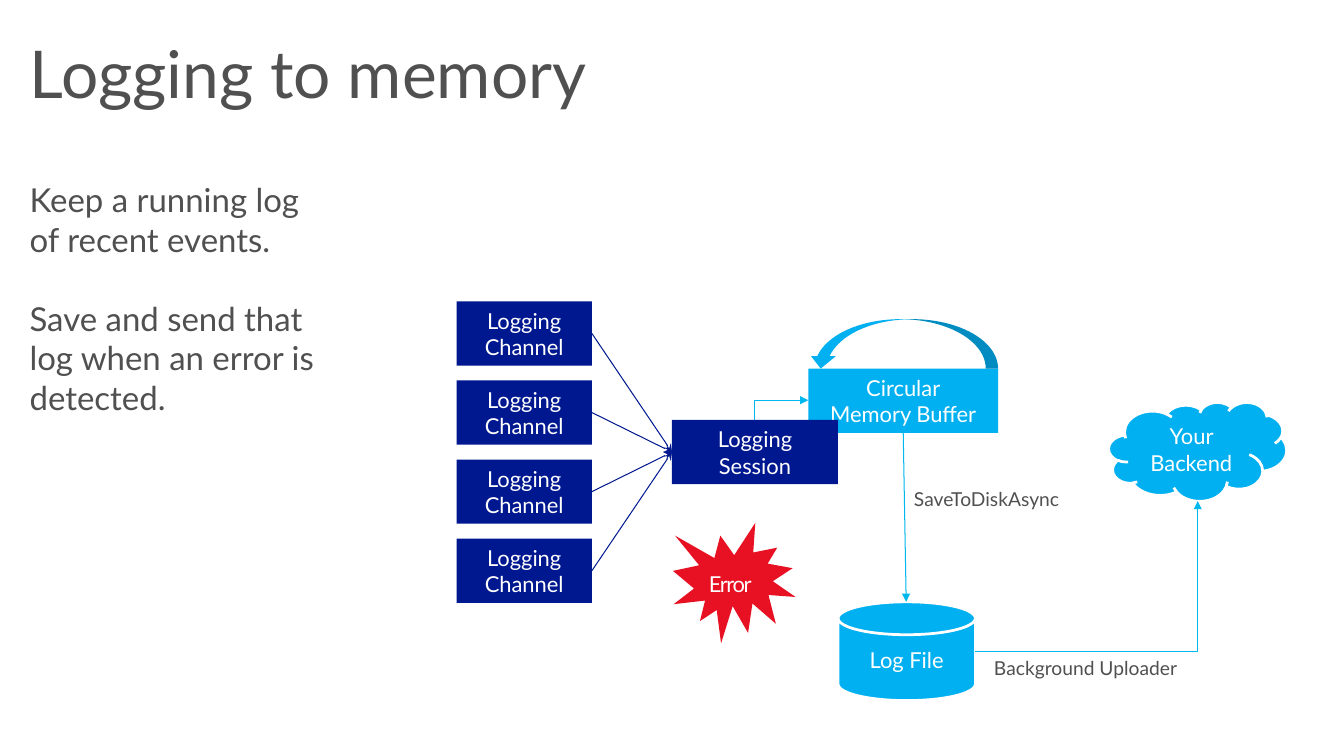
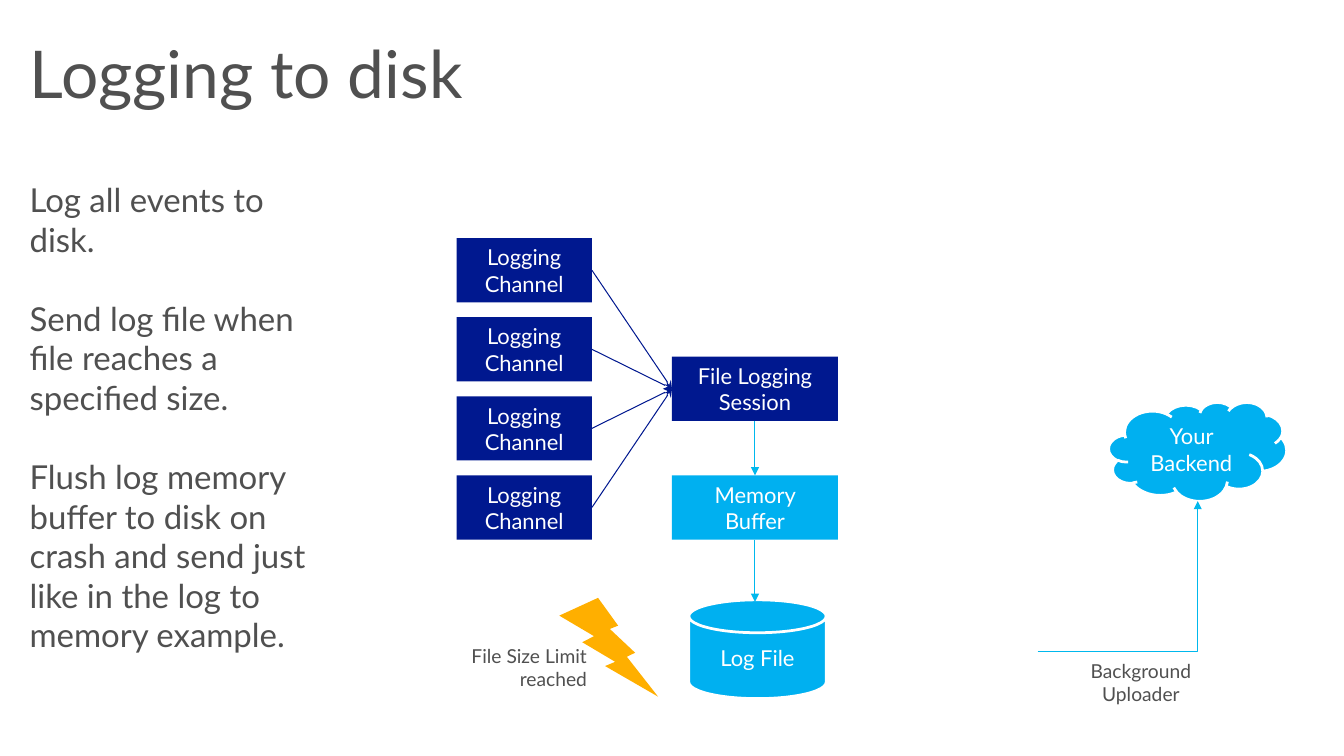
"""Build two slides on logging to memory and to disk."""
from lxml import etree
from pptx import Presentation
from pptx.dml.color import RGBColor
from pptx.enum.shapes import MSO_CONNECTOR, MSO_SHAPE
from pptx.enum.text import MSO_ANCHOR, PP_ALIGN
from pptx.oxml.ns import qn
from pptx.util import Inches, Pt

NAVY = RGBColor(0x00, 0x18, 0x8F)
SKY = RGBColor(0x00, 0xB0, 0xF0)
CYAN = RGBColor(0x00, 0xB8, 0xED)
RED = RGBColor(0xE8, 0x11, 0x23)
AMBER = RGBColor(0xFF, 0xAF, 0x00)
GREY = RGBColor(0x50, 0x50, 0x50)
WHITE = RGBColor(0xFF, 0xFF, 0xFF)

RECTANGLE = MSO_SHAPE.RECTANGLE
DISK = MSO_SHAPE.FLOWCHART_MAGNETIC_DISK
CLOUD = MSO_SHAPE.CLOUD
BURST = MSO_SHAPE.EXPLOSION1
BOLT = MSO_SHAPE.LIGHTNING_BOLT
LOOP = MSO_SHAPE.CURVED_DOWN_ARROW
STRAIGHT, ELBOW = MSO_CONNECTOR.STRAIGHT, MSO_CONNECTOR.ELBOW
LEFT, CENTER, RIGHT = PP_ALIGN.LEFT, PP_ALIGN.CENTER, PP_ALIGN.RIGHT
TOP, MIDDLE, BOTTOM = MSO_ANCHOR.TOP, MSO_ANCHOR.MIDDLE, MSO_ANCHOR.BOTTOM

FONT = "Lato"
COLUMNS, ROWS = 136, 76.5
CHANNEL_COUNT, CHANNEL_PITCH = 4, 8
BOX_HEIGHT = 6.5
SESSION_COLUMN, SESSION_WIDTH = 68, 16.8
DISK_SIZE = (13.9, 10)
LABEL_INSETS = (1.3, 0.7, 1.3, 0.7)
CAPTION_INSETS = (1, 0.5, 1, 0.5)
NO_INSETS = (0, 0, 0, 0)


def cells(count):
    """Turn a number of grid cells into a length."""
    return Inches(round(count * 0.1, 3))


def write(box, text, size, color, align=LEFT, anchor=TOP, insets=NO_INSETS, gap=0, wrap=True):
    """Fill a box with text and format each paragraph and run."""
    frame = box.text_frame
    frame.text = text
    frame.word_wrap = wrap
    frame.vertical_anchor = anchor
    (frame.margin_left, frame.margin_top,
     frame.margin_right, frame.margin_bottom) = map(cells, insets)
    for index, para in enumerate(frame.paragraphs):
        para.alignment = align
        para.space_before = Pt(gap if index else 0)
        for span in para.runs:
            span.font.name = FONT
            span.font.size = Pt(size)
            span.font.color.rgb = color


def add_text(page, area, text, size, **style):
    """Add a grey text box."""
    box = page.shapes.add_textbox(*map(cells, area))
    write(box, text, size, GREY, **style)


def add_caption(page, area, text, align=LEFT):
    """Add a small diagram caption."""
    add_text(page, area, text, 14, align=align, insets=CAPTION_INSETS, wrap=False)


def add_figure(page, kind, area, fill, outline=None):
    """Add a flat preset shape."""
    shape = page.shapes.add_shape(kind, *map(cells, area))
    shape.shadow.inherit = False
    shape.fill.solid()
    shape.fill.fore_color.rgb = fill
    if outline is None:
        shape.line.fill.background()
    else:
        shape.line.color.rgb = outline
        shape.line.width = Pt(2)
    return shape


def add_node(page, kind, area, text, fill, outline=None):
    """Add a diagram node with a centred white label."""
    node = add_figure(page, kind, area, fill, outline)
    write(node, text, 16, WHITE, CENTER, MIDDLE, LABEL_INSETS)
    return node


def add_arrow(page, start, end, color=CYAN, kind=STRAIGHT, head="triangle", side="tailEnd"):
    """Add a thin arrow; an elbow leaves its start sideways and turns once."""
    arrow = page.shapes.add_connector(kind, *map(cells, start + end))
    arrow.line.color.rgb = color
    arrow.line.width = Pt(0.75)
    properties = arrow._element.spPr
    if kind == ELBOW:
        properties.find(qn("a:prstGeom")).set("prst", "bentConnector2")
    etree.SubElement(properties.find(qn("a:ln")), qn("a:" + side)).set("type", head)
    etree.SubElement(properties, qn("a:effectLst"))
    return arrow


def add_session(page, top, text):
    """Add the column of channels that feed one session box."""
    session = add_node(page, RECTANGLE, (SESSION_COLUMN, top + 12, SESSION_WIDTH, BOX_HEIGHT),
                       text, NAVY)
    for index in range(CHANNEL_COUNT):
        area = (46.2, top + index * CHANNEL_PITCH, 13.7, BOX_HEIGHT)
        channel = add_node(page, RECTANGLE, area, "Logging Channel", NAVY)
        arrow = add_arrow(page, (0, 0), (1, 1), NAVY, head="stealth")
        arrow.begin_connect(channel, 3)
        arrow.end_connect(session, 1)
    return session


def add_disk(page, left, top):
    """Add the log file."""
    add_node(page, DISK, (left, top, *DISK_SIZE), "Log File", SKY, WHITE)


def add_backend(page, start_column):
    """Add the backend cloud and the upload arrow that rises to it."""
    add_node(page, CLOUD, (112.2, 40.7, 18, 10), "Your Backend", SKY, WHITE)
    add_arrow(page, (start_column, 65.9), (121.2, 50.7), kind=ELBOW)


def add_page(deck, title, points):
    """Add a blank slide with its title and side text."""
    page = deck.slides.add_slide(deck.slide_layouts[6])
    add_text(page, (3, 3.3, 130, 10), title, 48)
    add_text(page, (3, 18.2, 30, 55), "\n".join(points), 24, gap=28.8)
    return page


def build_memory_page(deck):
    """Build the slide on logging to memory."""
    page = add_page(deck, "Logging to memory", [
        "Keep a running log of recent events.",
        "Save and send that log when an error is detected.",
    ])
    memory = add_node(page, RECTANGLE, (81.8, 37.3, 19.2, BOX_HEIGHT),
                      "Circular\vMemory Buffer", SKY)
    loop = add_figure(page, LOOP, (81.8, 32.3, 19.2, 5), SKY)
    loop._element.spPr.find(qn("a:xfrm")).set("flipH", "1")
    add_session(page, 30.5, "Logging Session")
    add_arrow(page, (81.8, 40.5), (76.4, 42.5), kind=ELBOW, side="headEnd")
    error = add_figure(page, BURST, (68.1, 52.9, 12.4, 12.2), RED)
    write(error, "Error", 16, WHITE, anchor=BOTTOM, insets=(1, 1, 0.4, 0.4))
    error.text_frame.paragraphs[0].runs[0]._r.get_or_add_rPr().set("spc", "-100")
    add_disk(page, 84.8, 60.9)
    add_arrow(page, (91.4, 43.8), (91.7, 60.9)).begin_connect(memory, 2)
    add_backend(page, 98.7)
    add_caption(page, (91.5, 48.8, 16.8, 3.4), "SaveToDiskAsync")
    add_caption(page, (99.6, 65.9, 20.9, 3.4), "Background Uploader")


def build_disk_page(deck):
    """Build the slide on logging to disk."""
    page = add_page(deck, "Logging to disk", [
        "Log all events to disk.",
        "Send log file when file reaches a specified size.",
        "Flush log memory buffer to disk on crash and send just like in the log "
        "to memory example.",
    ])
    memory = add_node(page, RECTANGLE, (SESSION_COLUMN, 48.1, SESSION_WIDTH, BOX_HEIGHT),
                      "Memory Buffer", SKY)
    session = add_session(page, 24.1, "File Logging Session")
    feed = add_arrow(page, (76.4, 42.6), (76.4, 48.1))
    feed.begin_connect(session, 2)
    feed.end_connect(memory, 0)
    add_backend(page, 105)
    add_caption(page, (109, 66.2, 12.9, 5.7), "Background\nUploader", CENTER)
    add_figure(page, BOLT, (56.6, 60.5, 10, 10), AMBER)
    add_caption(page, (46.1, 64.7, 14.3, 5.7), "File Size Limit\nreached", RIGHT)
    add_disk(page, 69.7, 60.7)
    add_arrow(page, (76.4, 54.6), (76.4, 60.9)).begin_connect(memory, 2)


def main():
    """Build and save the deck."""
    deck = Presentation()
    deck.slide_width, deck.slide_height = cells(COLUMNS), cells(ROWS)
    build_memory_page(deck)
    build_disk_page(deck)
    deck.save("out.pptx")


if __name__ == "__main__":
    main()
